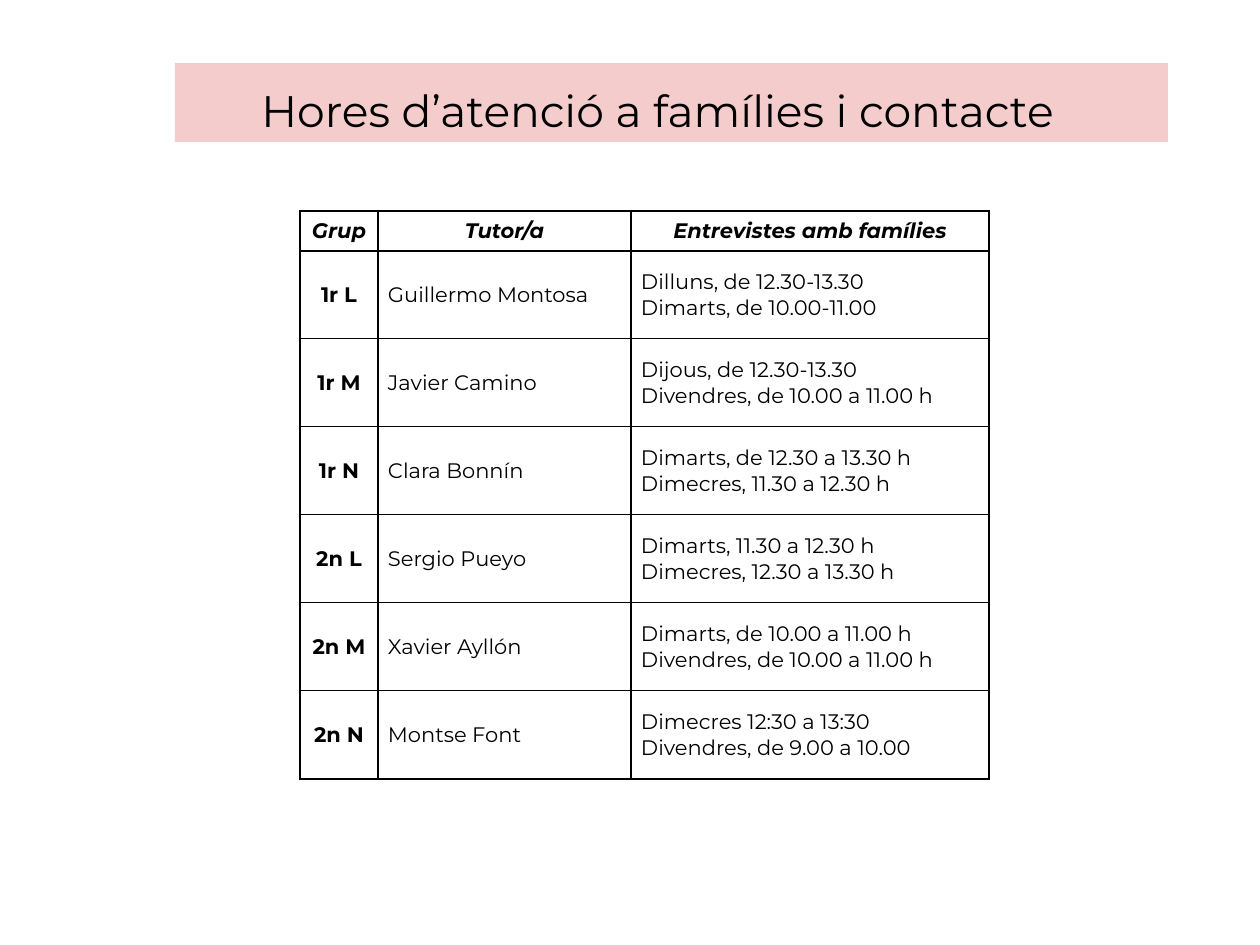
from lxml.etree import SubElement
from pptx import Presentation
from pptx.dml.color import RGBColor
from pptx.enum.shapes import MSO_SHAPE
from pptx.enum.text import MSO_ANCHOR, PP_ALIGN
from pptx.oxml.ns import qn
from pptx.util import Emu, Pt

EMU_PER_PX = 914400 / 126


def px(length):
    return Emu(round(length * EMU_PER_PX))


def color(value):
    return RGBColor.from_string(value)


class SlideBuilder:
    font_name = "Montserrat"
    ink = "000000"
    thin, thick = 0.75, 1.5

    def __init__(self, page):
        self.page = page

    def style(self, paragraph, size, bold=False, italic=False):
        font = paragraph.font
        font.name, font.size = self.font_name, Pt(size)
        font.bold, font.italic = bold, italic
        font.color.rgb = color(self.ink)

    def banner(self, text, left, top, width, height, fill, indent):
        box = self.page.shapes.add_shape(
            MSO_SHAPE.RECTANGLE, px(left), px(top), px(width), px(height))
        box.shadow.inherit = False
        box.fill.solid()
        box.fill.fore_color.rgb = color(fill)
        box.line.fill.background()
        frame = box.text_frame
        frame.word_wrap = True
        frame.vertical_anchor = MSO_ANCHOR.TOP
        frame.margin_left = frame.margin_right = Pt(7.2)
        frame.margin_top = frame.margin_bottom = Pt(7.2)
        para = frame.paragraphs[0]
        para.text = text
        para.alignment = PP_ALIGN.JUSTIFY
        para.line_spacing = 1.15
        para.space_before = Pt(5)
        properties = para._p.get_or_add_pPr()
        properties.set("marL", str(px(indent)))
        properties.set("indent", "0")
        self.style(para, 25.2)

    def borders(self, cell, widths):
        properties = cell._tc.get_or_add_tcPr()
        for side, width in widths.items():
            line = SubElement(properties, qn(f"a:ln{side}"), w=str(Pt(width)))
            fill = SubElement(line, qn("a:solidFill"))
            SubElement(fill, qn("a:srgbClr"), val=self.ink)

    def cell(self, cell, text, centered, bold, italic):
        cell.fill.background()
        cell.vertical_anchor = MSO_ANCHOR.MIDDLE
        cell.margin_left = cell.margin_right = px(10)
        cell.margin_top = cell.margin_bottom = 0
        cell.text = text
        for para in cell.text_frame.paragraphs:
            para.alignment = PP_ALIGN.CENTER if centered else PP_ALIGN.LEFT
            self.style(para, 12, bold, italic)

    def table(self, rows, left, top, widths, heights):
        table = self.page.shapes.add_table(
            len(rows), len(widths), px(left), px(top),
            px(sum(widths)), px(sum(heights))).table
        table.first_row = table.horz_banding = False
        for column, width in zip(table.columns, widths):
            column.width = px(width)
        for row, height in zip(table.rows, heights):
            row.height = px(height)

        last_row, last_column = len(rows) - 1, len(widths) - 1
        for r, texts in enumerate(rows):
            for c, text in enumerate(texts):
                cell = table.cell(r, c)
                # The outer frame and the line under the header are thick
                heavy = {"L": c == 0, "R": c == last_column,
                         "T": r <= 1, "B": r in (0, last_row)}
                self.borders(cell, {side: self.thick if is_heavy else self.thin
                                    for side, is_heavy in heavy.items()})
                header, key = r == 0, r == 0 or c == 0
                self.cell(cell, text, centered=key, bold=key, italic=header)


TIMETABLE = [
    ("Grup", "Tutor/a", "Entrevistes amb famílies"),
    ("1r L", "Guillermo Montosa", "Dilluns, de 12.30-13.30\nDimarts, de 10.00-11.00"),
    ("1r M", "Javier Camino", "Dijous, de 12.30-13.30\nDivendres, de 10.00 a 11.00 h"),
    ("1r N", "Clara Bonnín", "Dimarts, de 12.30 a 13.30 h\nDimecres, 11.30 a 12.30 h"),
    ("2n L", "Sergio Pueyo", "Dimarts, 11.30 a 12.30 h\nDimecres, 12.30 a 13.30 h"),
    ("2n M", "Xavier Ayllón", "Dimarts, de 10.00 a 11.00 h\nDivendres, de 10.00 a 11.00 h"),
    ("2n N", "Montse Font", "Dimecres 12:30 a 13:30\nDivendres, de 9.00 a 10.00"),
]


def main():
    deck = Presentation()
    deck.slide_width, deck.slide_height = px(1260), px(945)
    builder = SlideBuilder(deck.slides.add_slide(deck.slide_layouts[6]))

    # Title band
    builder.banner("Hores d’atenció a famílies i contacte",
                   175, 63, 993, 79, fill="F4CCCC", indent=74)

    # Tutors and meeting hours
    builder.table(TIMETABLE, 300, 211, widths=[78, 253, 358],
                  heights=[40] + [88] * (len(TIMETABLE) - 1))

    deck.save("out.pptx")


if __name__ == "__main__":
    main()
